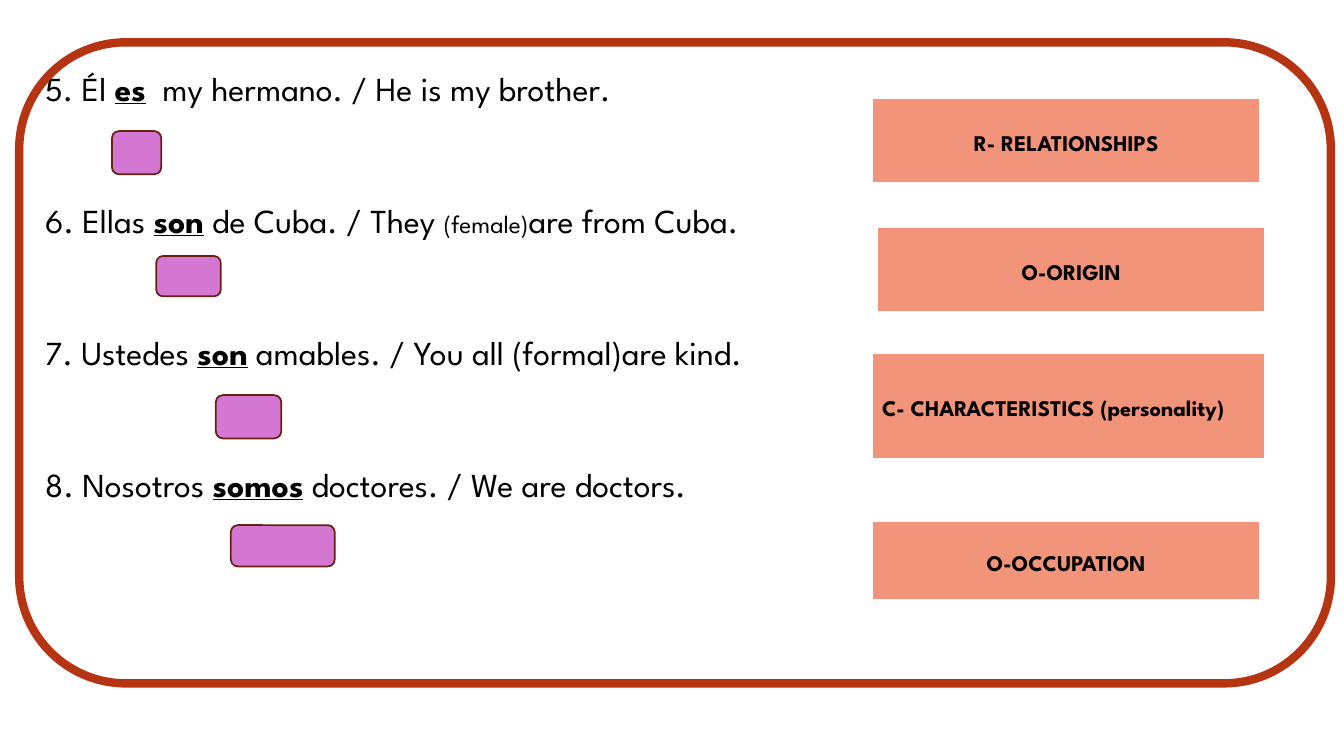
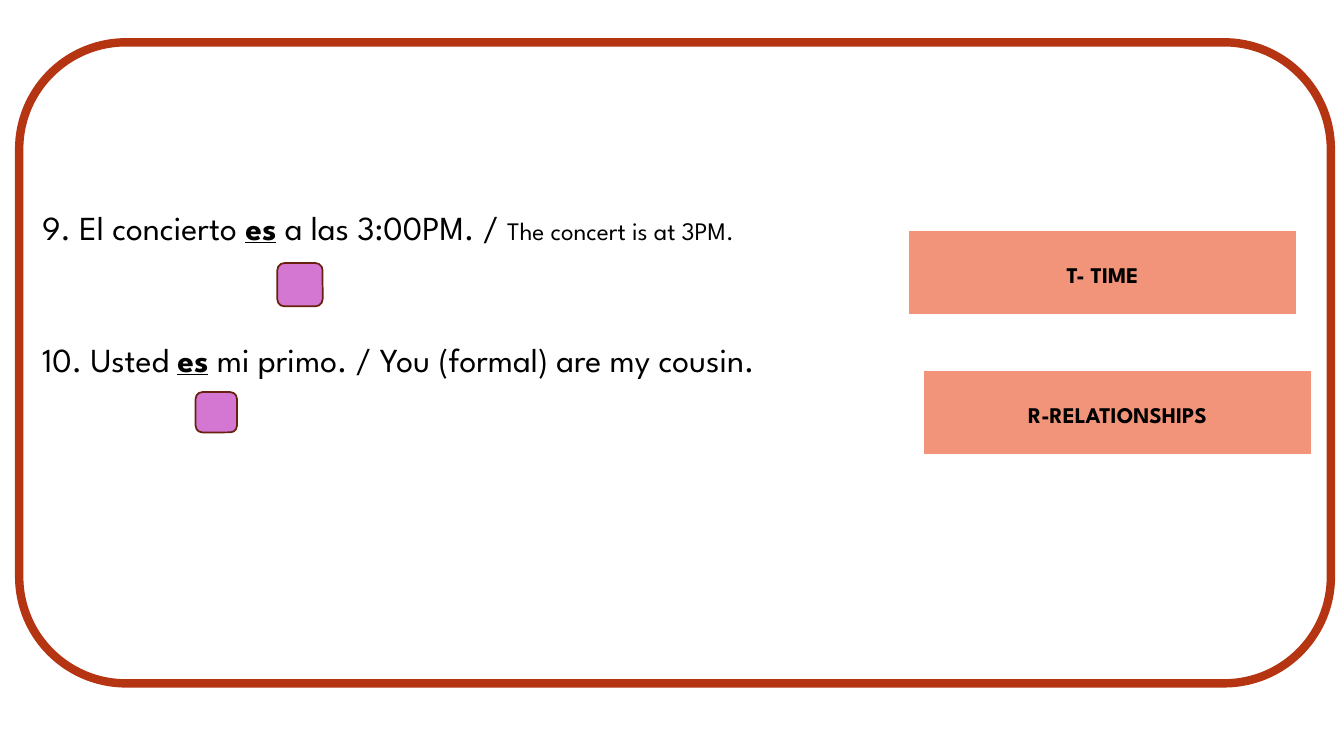
from pptx import Presentation
from pptx.dml.color import RGBColor
from pptx.enum.shapes import MSO_SHAPE as Shape
from pptx.enum.text import MSO_ANCHOR as Anchor, PP_ALIGN as Align
from pptx.util import Inches, Pt

BLACK = RGBColor(0x00, 0x00, 0x00)
WHITE = RGBColor(0xFF, 0xFF, 0xFF)
RUST = RGBColor(0xB5, 0x35, 0x13)
MAROON = RGBColor(0x66, 0x21, 0x0F)
SALMON = RGBColor(0xF1, 0x94, 0x7A)
ORCHID = RGBColor(0xD3, 0x77, 0xD3)
FONT = "League Spartan"
FRAME = (0.19, 0.42, 13.01, 6.36)
PITCH = 1.31
SIZES = (24, 24, 24, 18, 24)
VERB = 1

PAGES = [
    ((0.35, 0.62, 12.85, 6.15), [
        (("5. Él ", "es", "  my hermano. / He is my brother."),
         (0.76, 0.68, 0.49, 0.43),
         "R- RELATIONSHIPS", (8.3, 0.35, 3.85, 0.84), Align.CENTER),
        (("6. Ellas ", "son", " de Cuba. / They ", "(female)", "are from Cuba."),
         (1.2, 0.61, 0.64, 0.4),
         "O-ORIGIN", (8.35, 0.32, 3.85, 0.84), Align.CENTER),
        (("7. Ustedes ", "son", " amables. / You all (formal)are kind."),
         (1.79, 0.68, 0.65, 0.43),
         "C- CHARACTERISTICS (personality)", (8.3, 0.26, 3.9, 1.05), Align.LEFT),
        (("8. Nosotros ", "somos", " doctores. / We are doctors."),
         (1.94, 0.66, 1.03, 0.41),
         "O-OCCUPATION", (8.3, 0.62, 3.85, 0.78), Align.CENTER),
    ]),
    ((0.32, 2.0, 12.85, 3.5), [
        (("9. El concierto ", "es", " a las 3:00PM. / ", "The concert is at 3PM."),
         (2.43, 0.61, 0.45, 0.43),
         "T- TIME", (8.69, 0.28, 3.85, 0.84), Align.CENTER),
        (("10. Usted ", "es", " mi primo. / You (formal) are my cousin."),
         (1.62, 0.58, 0.41, 0.4),
         "R-RELATIONSHIPS", (8.84, 0.36, 3.85, 0.84), Align.CENTER),
    ]),
]


def add_box(slide, kind, box, fill, line, width):
    shape = slide.shapes.add_shape(kind, *map(Inches, box))
    shape.shadow.inherit = False
    if fill is None:
        shape.fill.background()
    else:
        shape.fill.solid()
        shape.fill.fore_color.rgb = fill
    shape.line.color.rgb = line
    shape.line.width = Pt(width)
    return shape


def set_font(run, size, bold=False, under=False):
    font = run.font
    font.name = FONT
    font.size = Pt(size)
    font.bold = bold
    font.underline = under
    font.color.rgb = BLACK


def add_lines(slide, box, rows):
    frame = slide.shapes.add_textbox(*map(Inches, box)).text_frame
    frame.word_wrap = True
    for i, row in enumerate(rows):
        para = frame.add_paragraph() if i else frame.paragraphs[0]
        para.line_spacing = 3.0 if i else 1.0
        para.space_after = Pt(8)
        for j, (text, size) in enumerate(zip(row[0], SIZES)):
            run = para.add_run()
            run.text = text
            set_font(run, size, j == VERB, j == VERB)


def add_tag(slide, box, text, align):
    shape = add_box(slide, Shape.RECTANGLE, box, SALMON, WHITE, 1.25)
    frame = shape.text_frame
    frame.text = text
    frame.word_wrap = True
    frame.vertical_anchor = Anchor.MIDDLE
    para = frame.paragraphs[0]
    para.alignment = align
    para.line_spacing = 1.15
    para.space_after = Pt(8)
    set_font(para.runs[0], 16, True)


def add_page(deck, box, rows):
    slide = deck.slides.add_slide(deck.slide_layouts[6])
    add_lines(slide, box, rows)
    add_box(slide, Shape.ROUNDED_RECTANGLE, FRAME, None, RUST, 6)
    left, top = box[:2]
    for i, (_, tile, label, tag, align) in enumerate(rows):
        def place(part):
            x, y, wide, high = part
            return left + x, top + i * PITCH + y, wide, high

        add_tag(slide, place(tag), label, align)
        add_box(slide, Shape.ROUNDED_RECTANGLE, place(tile), ORCHID, MAROON, 1.25)


def main():
    deck = Presentation()
    deck.slide_width = Inches(13.33)
    deck.slide_height = Inches(7.5)
    for box, rows in PAGES:
        add_page(deck, box, rows)
    deck.save("out.pptx")


if __name__ == "__main__":
    main()
